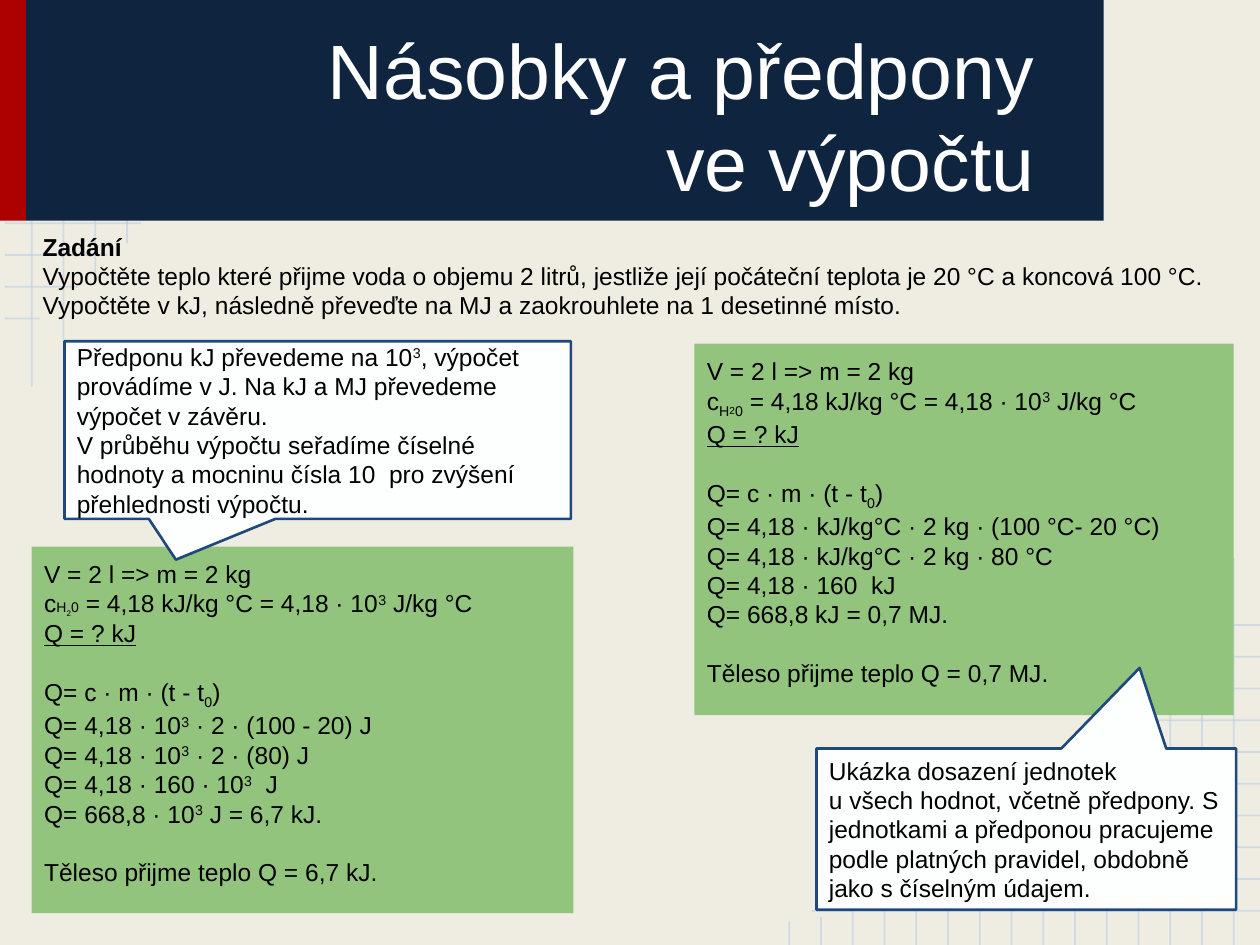
from collections import namedtuple

from lxml.etree import SubElement
from pptx import Presentation
from pptx.dml.color import RGBColor
from pptx.enum.shapes import MSO_CONNECTOR as Connector, MSO_SHAPE as Preset
from pptx.enum.text import MSO_ANCHOR as Anchor, MSO_AUTO_SIZE as AutoSize, PP_ALIGN as Align
from pptx.oxml.ns import qn
from pptx.util import Cm, Pt

CREAM = RGBColor(0xEF, 0xED, 0xE2)
GRID_BLUE = RGBColor(0xB7, 0xCC, 0xE4)
RED = RGBColor(0xAB, 0x01, 0x01)
NAVY = RGBColor(0x0F, 0x24, 0x3E)
GREEN = RGBColor(0x93, 0xC4, 0x7D)
PAPER = RGBColor(0xFD, 0xFF, 0xFF)
EDGE_BLUE = RGBColor(0x1F, 0x49, 0x7D)
WHITE = RGBColor(0xFF, 0xFF, 0xFF)
BLACK = RGBColor(0x00, 0x00, 0x00)

FONT = "Arial"
INSET = 0.25
PITCH = 0.64
BLANK_LINE = 16.8

Box = namedtuple("Box", "left top width height")
Span = namedtuple("Span", "text size bold underline baseline", defaults=(14, False, False, 0))


def lengths(box):
    return [Cm(value) for value in box]


def sub(text, size=14):
    return Span(text, size, baseline=-25)


CUBED = Span("3", baseline=30)
MASS = [Span("V = 2 l => m = 2 kg")]
HEAT_CAPACITY = [Span(" = 4,18 kJ/kg °C = 4,18 · 10"), CUBED, Span(" J/kg °C")]
UNKNOWN = [Span("Q = ? kJ", underline=True)]
FORMULA = [Span("Q= c · m · (t - t"), sub("0"), Span(")")]


def power_line(before, after):
    return [Span(before), CUBED, Span(after)]


NUMBERS_SOLUTION = [
    [MASS, [Span("c"), Span("H", 8), sub("2", 8), Span("0", 8)] + HEAT_CAPACITY, UNKNOWN],
    [
        FORMULA,
        power_line("Q= 4,18 · 10", " · 2 · (100 - 20) J"),
        power_line("Q= 4,18 · 10", " · 2 · (80) J"),
        power_line("Q= 4,18 · 160 · 10", "  J"),
        power_line("Q= 668,8 · 10", " J = 6,7 kJ."),
    ],
    [[Span("Těleso přijme teplo Q = 6,7 kJ.")]],
]
UNITS_SOLUTION = [
    [MASS, [Span("c"), sub("H"), sub("2", 10), sub("0")] + HEAT_CAPACITY, UNKNOWN],
    [
        FORMULA,
        [Span("Q= 4,18 · kJ/kg°C · 2 kg · (100 °C- 20 °C)")],
        [Span("Q= 4,18 · kJ/kg°C · 2 kg · 80 °C")],
        [Span("Q= 4,18 · 160  kJ")],
        [Span("Q= 668,8 kJ = 0,7 MJ.")],
    ],
    [[Span("Těleso přijme teplo Q = 0,7 MJ.")]],
]
TASK = [[
    [Span("Zadání", bold=True)],
    [Span("Vypočtěte teplo které přijme voda o objemu 2 litrů, jestliže její počáteční "
          "teplota je 20 °C a koncová 100 °C. Vypočtěte v kJ, následně převeďte na MJ "
          "a zaokrouhlete na 1 desetinné místo.")],
]]
PREFIX_NOTE = [[
    power_line("Předponu kJ převedeme na 10",
               ", výpočet provádíme v J. Na kJ a MJ převedeme výpočet v závěru."),
    [Span("V průběhu výpočtu seřadíme číselné hodnoty a mocninu čísla 10  pro zvýšení "
          "přehlednosti výpočtu.")],
]]
UNITS_NOTE = [[
    [Span("Ukázka dosazení jednotek")],
    [Span("u všech hodnot, včetně předpony. S jednotkami a předponou pracujeme podle "
          "platných pravidel, obdobně jako s číselným údajem.")],
]]


def add_span(para, item, color):
    span = para.add_run()
    span.text = item.text
    font = span.font
    font.name, font.size, font.color.rgb = FONT, Pt(item.size), color
    font.bold, font.underline = item.bold, item.underline
    if item.baseline:
        span._r.get_or_add_rPr().set("baseline", str(item.baseline * 1000))


def prepare_frame(frame, anchor):
    frame.word_wrap = True
    frame.auto_size = AutoSize.NONE
    frame.vertical_anchor = anchor
    frame.margin_left = frame.margin_right = Cm(INSET)
    frame.margin_top = frame.margin_bottom = Cm(INSET)


def write_sections(frame, sections, anchor=Anchor.TOP):
    prepare_frame(frame, anchor)
    para = None
    for section in sections:
        for index, line in enumerate(section):
            starts_section = para is not None and index == 0
            para = frame.paragraphs[0] if para is None else frame.add_paragraph()
            para.alignment = Align.LEFT
            if starts_section:
                para.space_before = Pt(BLANK_LINE)
            for item in line:
                add_span(para, item, BLACK)


def add_panel(page, preset, box, fill):
    panel = page.shapes.add_shape(preset, *lengths(box))
    panel.shadow.inherit = False
    panel.fill.solid()
    panel.fill.fore_color.rgb = fill
    panel.line.fill.background()
    return panel


def add_grid_line(page, *ends):
    rule = page.shapes.add_connector(Connector.STRAIGHT, *lengths(ends))
    rule.line.color.rgb = GRID_BLUE
    rule.line.width = Pt(1)
    properties = rule._element.spPr
    SubElement(next(properties.iter(qn("a:srgbClr"))), qn("a:alpha"), val="54000")
    SubElement(properties, qn("a:effectLst"))


def add_left_grid(page, box):
    for index, length in enumerate([2.74, 2.06, 1.47, 0.71]):
        y = box.top + 0.05 + index * PITCH
        add_grid_line(page, box.left, y, box.left + length, y)
    for index, length in enumerate([3.35, 2.41, 1.16, 0.45]):
        x = box.left + 0.54 + index * PITCH
        add_grid_line(page, x, box.top, x, box.top + length)


def add_right_grid(page, box):
    right, bottom = box.left + box.width, box.top + box.height
    row_lengths = [9.04, 7.42, 6.02, 5.18, 4.14, 3.38, 2.74, 2.06, 1.47, 0.74]
    for index, length in enumerate(row_lengths):
        y = bottom - 0.69 - index * PITCH
        add_grid_line(page, right, y, right - length, y)
    column_lengths = [7.8, 6.86, 5.61, 4.9, 4.37, 3.94, 3.33, 2.92,
                      2.44, 2.08, 1.63, 1.09, 0.81, 0.56, 0.46]
    for index, length in enumerate(column_lengths):
        x = right - 0.53 - index * PITCH
        add_grid_line(page, x, bottom - length, x, bottom)


def add_banner(page, box):
    stripe = 0.53
    add_panel(page, Preset.RECTANGLE, box._replace(width=stripe), RED)
    add_panel(page, Preset.RECTANGLE,
              box._replace(left=box.left + stripe, width=box.width - stripe), NAVY)
    title = page.shapes.title
    title.left, title.top, title.width, title.height = lengths(
        box._replace(width=box.width - 1.14, height=box.height - 0.03))
    prepare_frame(title.text_frame, Anchor.BOTTOM)
    para = title.text_frame.paragraphs[0]
    para.alignment = Align.RIGHT
    add_span(para, Span("Násobky a předpony", 44), WHITE)
    para.add_line_break()
    add_span(para, Span("ve výpočtu", 44), WHITE)
    page.shapes._spTree.append(title._element)


def add_task(page, box):
    write_sections(page.shapes.add_textbox(*lengths(box)).text_frame, TASK)


def add_solution(page, box, sections):
    write_sections(add_panel(page, Preset.RECTANGLE, box, GREEN).text_frame, sections)


def add_callout(page, box, tip, sections):
    callout = add_panel(page, Preset.RECTANGULAR_CALLOUT, box, PAPER)
    callout.line.color.rgb = EDGE_BLUE
    callout.line.width = Pt(1.5)
    callout.adjustments[0], callout.adjustments[1] = tip
    write_sections(callout.text_frame, sections, Anchor.MIDDLE)


def main():
    deck = Presentation()
    deck.slide_width, deck.slide_height = Cm(25.4), Cm(19.05)
    page = deck.slides.add_slide(deck.slide_layouts[5])
    page.background.fill.solid()
    page.background.fill.fore_color.rgb = CREAM
    add_left_grid(page, Box(0.1, 4.45, 2.74, 3.35))
    add_right_grid(page, Box(15.9, 11.25, 9.5, 7.8))
    add_banner(page, Box(0, 0, 22.25, 4.45))
    add_task(page, Box(0.61, 4.42, 24.43, 2.39))
    add_solution(page, Box(0.64, 11.02, 10.92, 7.39), NUMBERS_SOLUTION)
    add_solution(page, Box(14, 6.93, 10.87, 7.49), UNITS_SOLUTION)
    add_callout(page, Box(1.3, 6.88, 10.21, 3.58), (-0.28, 0.73), PREFIX_NOTE)
    add_callout(page, Box(16.46, 15.09, 8.46, 3.25), (0.27, -1), UNITS_NOTE)
    deck.save("out.pptx")


if __name__ == "__main__":
    main()
